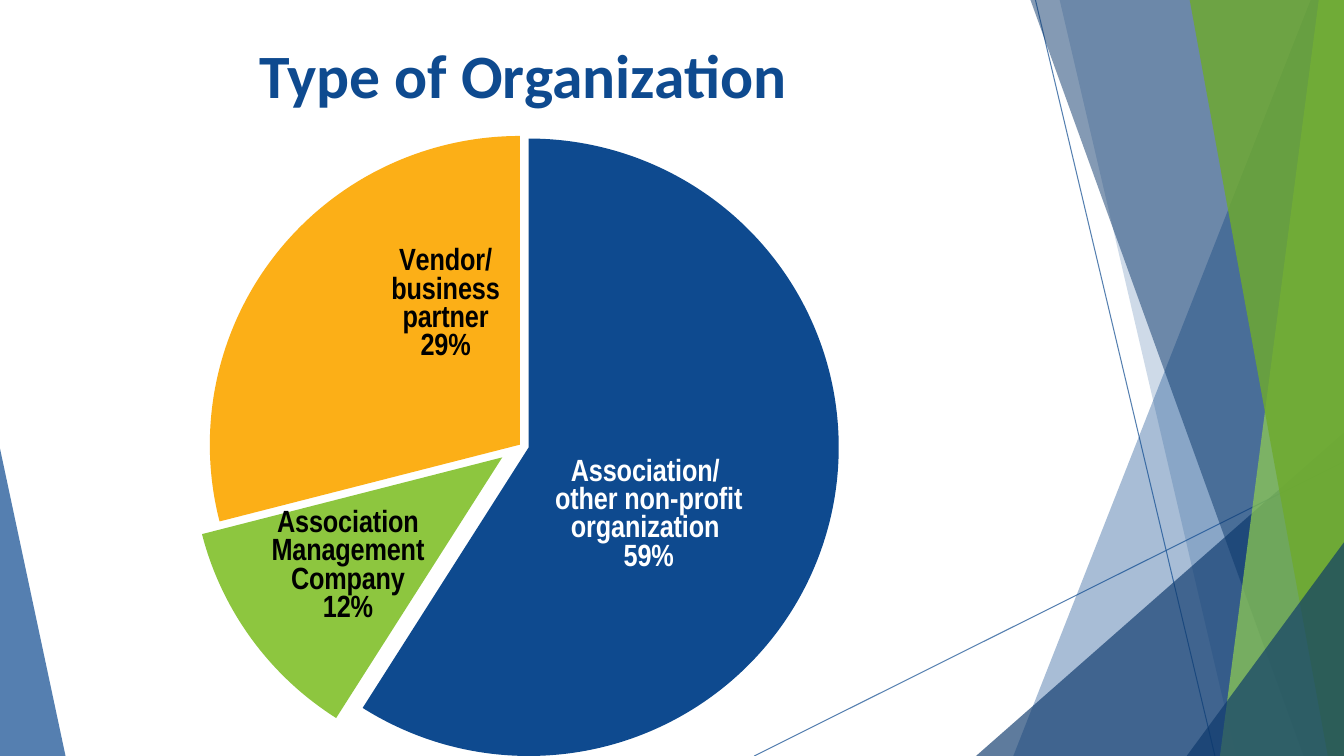
from lxml import etree
from pptx import Presentation
from pptx.chart.data import CategoryChartData
from pptx.dml.color import RGBColor
from pptx.enum.chart import XL_CHART_TYPE, XL_LABEL_POSITION
from pptx.enum.shapes import MSO_CONNECTOR
from pptx.enum.text import MSO_ANCHOR, PP_ALIGN
from pptx.oxml import parse_xml
from pptx.oxml.ns import nsdecls, qn
from pptx.util import Inches, Pt

PIE = XL_CHART_TYPE.PIE
LABEL_CENTER = XL_LABEL_POSITION.CENTER
STRAIGHT = MSO_CONNECTOR.STRAIGHT
MIDDLE = MSO_ANCHOR.MIDDLE
CENTER = PP_ALIGN.CENTER

NAVY, DEEP = "0E4A8F", "0B376B"
WIDTH, HEIGHT = 13.33, 7.5
PANELS_BACK = [
    (NAVY, 70, [(0, 4.45), (0.65, HEIGHT), (0, HEIGHT)]),
]
LINES = [((7.48, 7.5), (13.35, 4.57)), ((10.27, 0), (12.05, 7.5))]
PANELS_FRONT = [
    (NAVY, 36, [(13, 0), (10.05, HEIGHT), (WIDTH, HEIGHT), (WIDTH, 0)]),
    (NAVY, 20, [(10.51, 0), (12.26, HEIGHT), (WIDTH, HEIGHT), (WIDTH, 0)]),
    (DEEP, 66, [(9.68, HEIGHT), (WIDTH, 4.29), (WIDTH, HEIGHT)]),
    (DEEP, 50, [(10.22, 0), (12.93, HEIGHT), (WIDTH, HEIGHT), (WIDTH, 0)]),
    ("92D050", 70, [(13.08, 0), (12.1, HEIGHT), (WIDTH, HEIGHT), (WIDTH, 0)]),
    ("6EAA2E", 82, [(11.8, 0), (13.17, HEIGHT), (WIDTH, HEIGHT), (WIDTH, 0)]),
    (DEEP, 66, [(11.77, HEIGHT), (WIDTH, 5.38), (WIDTH, HEIGHT)]),
]
SLICES = [
    ("Association/ \nother non-profit\norganization ", 0.59, NAVY, "FFFFFF", 3,
     (-0.03, 0.04)),
    ("Association Management Company", 0.12, "8DC63F", "000000", 7, (-0.03, 0.03)),
    ("Vendor/\nbusiness\npartner", 0.29, "FCAF17", "000000", 0, (0.05, -0.07)),
]


def rgb(value):
    """Return a colour from its hex string."""
    return RGBColor.from_string(value)


def apply_format(target, values):
    """Set each attribute in a dict of format values."""
    for name, value in values.items():
        setattr(target, name, value)


def set_opacity(fill_parent, percent):
    """Make the solid colour under an element partly transparent."""
    color = next(fill_parent.iter(qn("a:srgbClr")))
    etree.SubElement(color, qn("a:alpha")).set("val", str(percent * 1000))


def add_panels(page, panels):
    """Draw translucent straight-sided panels."""
    for color, opacity, points in panels:
        corners = [(Inches(x), Inches(y)) for x, y in points]
        builder = page.shapes.build_freeform(*corners[0])
        builder.add_line_segments(corners[1:], close=True)
        panel = builder.convert_to_shape()
        panel.shadow.inherit = False
        panel.fill.solid()
        panel.fill.fore_color.rgb = rgb(color)
        panel.line.fill.background()
        set_opacity(panel.element.spPr, opacity)


def add_lines(page):
    """Draw the two thin crossing lines."""
    for start, end in LINES:
        line = page.shapes.add_connector(STRAIGHT, *map(Inches, start + end))
        line.line.color.rgb = rgb(NAVY)
        line.line.width = Pt(0.75)
        properties = line._element.spPr
        set_opacity(properties, 70)
        etree.SubElement(properties, qn("a:effectLst"))


def add_title(page, left, top, width, height):
    """Write the centred title in its box."""
    box = page.shapes.add_textbox(*map(Inches, (left, top, width, height)))
    apply_format(box.text_frame, {"word_wrap": True, "vertical_anchor": MIDDLE})
    para = box.text_frame.paragraphs[0]
    para.alignment = CENTER
    span = para.add_run()
    span.text = "Type of Organization"
    apply_format(span.font, {"name": "Calibri", "size": Pt(44), "bold": True})
    span.font.color.rgb = rgb(NAVY)


def layout_xml(values):
    """Return a manual chart layout built from its settings."""
    settings = "".join(f'<c:{name} val="{value}"/>' for name, value in values.items())
    return parse_xml(f'<c:layout {nsdecls("c")}><c:manualLayout>{settings}'
                     '</c:manualLayout></c:layout>')


def add_slice_label(point, color, shift):
    """Show category and value on a slice, moved by a share of the chart."""
    label = point.data_label
    apply_format(label.font, {"name": "Arial Narrow", "size": Pt(22), "bold": True})
    label.font.color.rgb = rgb(color)
    label.position = LABEL_CENTER
    node = label._get_or_add_dLbl()
    node.find(qn("c:showCatName")).set("val", "1")
    etree.SubElement(node, qn("c:separator")).text = "\n"
    node.find(qn("c:idx")).addnext(layout_xml({"x": shift[0], "y": shift[1]}))


def add_pie(page, left, top, width, height):
    """Draw the exploded pie chart in its box."""
    data = CategoryChartData(number_format="0%")
    data.categories = [entry[0] for entry in SLICES]
    data.add_series("Series 1", [entry[1] for entry in SLICES])
    frame = page.shapes.add_chart(PIE, *map(Inches, (left, top, width, height)), data)
    chart = frame.chart
    apply_format(chart, {"has_legend": False, "has_title": False})
    apply_format(chart.font, {"name": "Arial Narrow", "size": Pt(18), "bold": True})
    chart.plots[0].vary_by_categories = True
    series = chart.plots[0].series[0]
    for index, (_, _, color, text_color, explosion, shift) in enumerate(SLICES):
        point = series.points[index]
        point.format.fill.solid()
        point.format.fill.fore_color.rgb = rgb(color)
        point.format.line.fill.background()
        properties = next(node for node in series._element.findall(qn("c:dPt"))
                          if node.find(qn("c:idx")).get("val") == str(index))
        burst = etree.Element(qn("c:explosion"))
        burst.set("val", str(explosion))
        properties.find(qn("c:spPr")).addprevious(burst)
        add_slice_label(point, text_color, shift)
    area = chart._chartSpace.chart.plotArea
    for layout in area.findall(qn("c:layout")):
        area.remove(layout)
    area.insert(0, layout_xml({"layoutTarget": "inner", "xMode": "edge", "yMode": "edge",
                               "x": 0.01, "y": 0.03, "w": 0.86, "h": 0.97}))


def build_slide(page):
    """Place the backdrop, the title and the chart."""
    add_panels(page, PANELS_BACK)
    add_lines(page)
    add_panels(page, PANELS_FRONT)
    add_title(page, 0, 0.27, 10.38, 0.92)
    add_pie(page, 0.95, 1.16, 9.56, 6.34)


def main():
    """Build and save the deck."""
    deck = Presentation()
    deck.slide_width, deck.slide_height = Inches(WIDTH), Inches(HEIGHT)
    build_slide(deck.slides.add_slide(deck.slide_layouts[6]))
    deck.save("out.pptx")


if __name__ == "__main__":
    main()
